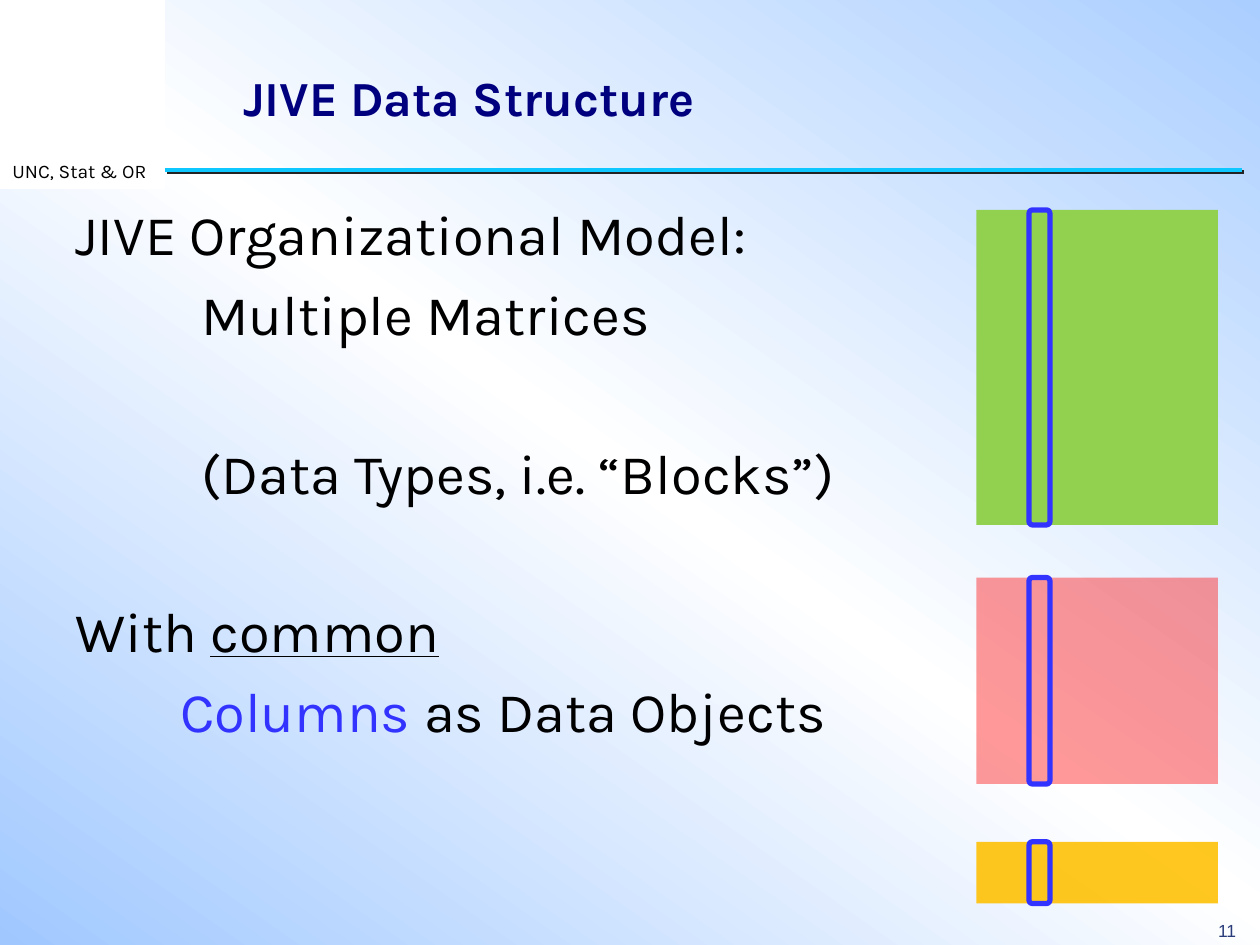
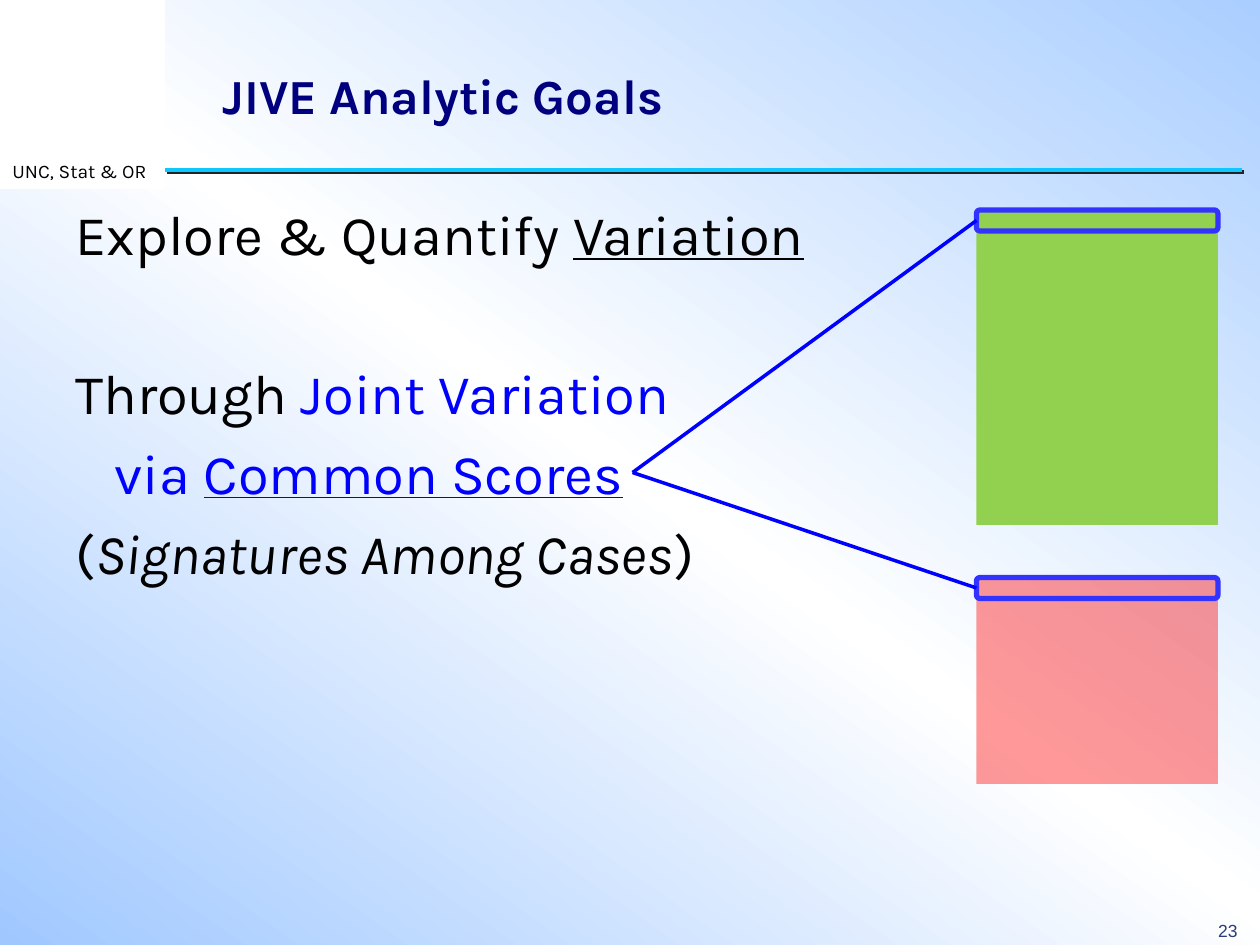
from lxml import etree
from pptx import Presentation
from pptx.dml.color import RGBColor
from pptx.enum.shapes import MSO_CONNECTOR, MSO_SHAPE
from pptx.enum.text import MSO_ANCHOR, PP_ALIGN
from pptx.oxml.ns import qn
from pptx.util import Pt

STRAIGHT = MSO_CONNECTOR.STRAIGHT
RECT, ROUNDED = MSO_SHAPE.RECTANGLE, MSO_SHAPE.ROUNDED_RECTANGLE
TOP, MIDDLE, BOTTOM = MSO_ANCHOR.TOP, MSO_ANCHOR.MIDDLE, MSO_ANCHOR.BOTTOM
LEFT = PP_ALIGN.LEFT

BLACK, WHITE, NAVY = "000000", "FFFFFF", "00007F"
BLUE, OUTLINE_BLUE = "0000FF", "3333FF"
RULE_BLUE, RULE_SHADOW, NUMBER_BLUE = "0FC7FF", "232323", "2A3D7A"
BACKDROP = [(0, "AACEFF"), (50, "FFFFFF"), (100, "A0C8FF")]

BLOCK_LEFT, BLOCK_WIDTH = 558, 138
GREEN_BLOCK = dict(top=120, height=180, color="92D050", alpha=100)
RED_BLOCK = dict(top=330, height=118, color="FF0000", alpha=40)
GOLD_BLOCK = dict(top=481, height=35.3, color="FFC000", alpha=88)
BAR = 12

LINE_GAP, SECTION_GAP = 7.4, 52.2
TAB = 72


def rgb(color):
    return RGBColor.from_string(color)


def points(*lengths):
    return [Pt(length) for length in lengths]


def child(parent, tag, **attributes):
    return etree.SubElement(parent, qn(tag), {k: str(v) for k, v in attributes.items()})


class Deck:
    def __init__(self):
        self.prs = Presentation()
        self.prs.slide_width, self.prs.slide_height = points(720, 540)
        self.slide = None
        self.paint_backdrop()

    def paint_backdrop(self):
        master = self.prs.slide_master
        fill = master.background.fill
        fill.gradient()
        fill.gradient_angle = 235
        stops = master.element.find(".//" + qn("a:gsLst"))
        for stop in list(stops):
            stops.remove(stop)
        for position, color in BACKDROP:
            stop = child(stops, "a:gs", pos=position * 1000)
            child(stop, "a:srgbClr", val=color)

    def start_slide(self, title, left, top, number):
        self.slide = self.prs.slides.add_slide(self.prs.slide_layouts[5])
        corner = self.shape(RECT, 0, 0, 94.3, 108, fill=WHITE)
        self.fill_text(corner.text_frame, [["UNC, Stat & OR"]], dict(size=11), anchor=BOTTOM)
        self.line(94.3, 97.2, 710, 97.2, RULE_BLUE, 2.25, shadow=RULE_SHADOW)
        self.text(689, 522, 26.6, 18, [[str(number)]],
                  dict(size=10, name="Arial", color=NUMBER_BLUE), wrap=False)
        heading = self.slide.shapes.title
        heading.left, heading.top, heading.width, heading.height = points(left, top, 563, 39)
        self.fill_text(heading.text_frame, [[title]],
                       dict(size=28, bold=True, color=NAVY), anchor=MIDDLE)

    def fill_text(self, frame, lines, style, anchor=TOP, wrap=True, inset=3.6):
        frame.word_wrap = wrap
        frame.vertical_anchor = anchor
        frame.margin_top = Pt(inset)
        for index, runs in enumerate(lines):
            paragraph = frame.add_paragraph() if index else frame.paragraphs[0]
            paragraph.alignment = LEFT
            for run in runs:
                words, changes = run if isinstance(run, tuple) else (run, {})
                piece = paragraph.add_run()
                piece.text = words
                values = {"name": "Karla", "color": BLACK, **style, **changes}
                piece.font.color.rgb = rgb(values.pop("color"))
                values["size"] = Pt(values["size"])
                for key, value in values.items():
                    setattr(piece.font, key, value)

    def text(self, left, top, width, height, lines, style, **options):
        box = self.slide.shapes.add_textbox(*points(left, top, width, height))
        self.fill_text(box.text_frame, lines, style, **options)
        return box

    def body(self, lines):
        box = self.text(36, 108, 651, 376, [runs for _, _, runs in lines],
                        dict(size=32), inset=6)
        for index, (gap, indent, _) in enumerate(lines):
            paragraph = box.text_frame.paragraphs[index]
            paragraph.space_before = Pt(gap)
            properties = paragraph._p.get_or_add_pPr()
            properties.set("marL", str(Pt(indent)))
            properties.set("indent", "0")

    def shape(self, preset, left, top, width, height, fill=None, alpha=100, outline=None):
        figure = self.slide.shapes.add_shape(preset, *points(left, top, width, height))
        figure.shadow.inherit = False
        if fill:
            figure.fill.solid()
            figure.fill.fore_color.rgb = rgb(fill)
            if alpha < 100:
                color = figure._element.spPr.find(".//" + qn("a:srgbClr"))
                child(color, "a:alpha", val=alpha * 1000)
        else:
            figure.fill.background()
        if outline:
            figure.line.color.rgb = rgb(outline)
            figure.line.width = Pt(3)
        else:
            figure.line.fill.background()
        return figure

    def block(self, top, height, color, alpha):
        self.shape(RECT, BLOCK_LEFT, top, BLOCK_WIDTH, height, color, alpha)

    def highlight(self, left, top, width, height):
        self.shape(ROUNDED, left, top, width, height, outline=OUTLINE_BLUE)

    def line(self, x1, y1, x2, y2, color, width, shadow=None):
        connector = self.slide.shapes.add_connector(STRAIGHT, *points(x1, y1, x2, y2))
        connector.line.color.rgb = rgb(color)
        connector.line.width = Pt(width)
        effects = child(connector._element.spPr, "a:effectLst")
        if shadow:
            cast = child(effects, "a:outerShdw", dist=Pt(1.4), dir=45 * 60000,
                         algn="ctr", rotWithShape=0)
            child(cast, "a:srgbClr", val=shadow)


def data_structure(deck):
    deck.start_slide("JIVE Data Structure", 131.8, 36, 11)
    deck.body([
        (0, 0, ["JIVE Organizational Model:"]),
        (LINE_GAP, TAB, ["Multiple Matrices"]),
        (SECTION_GAP, TAB, ["(Data Types, i.e. “Blocks”)"]),
        (SECTION_GAP, 0, ["With ", ("common", dict(underline=True))]),
        (LINE_GAP, 60, [("Columns", dict(color=OUTLINE_BLUE)), " as Data Objects"]),
    ])
    blocks = [GREEN_BLOCK, RED_BLOCK, GOLD_BLOCK]
    for block in blocks:
        deck.block(**block)
    for block in blocks:
        deck.highlight(588, block["top"], BAR, block["height"])


def analytic_goals(deck):
    deck.start_slide("JIVE Analytic Goals", 120, 34.6, 23)
    deck.body([
        (0, 0, ["Explore & Quantify ", ("Variation", dict(underline=True))]),
        (SECTION_GAP, 0, ["Through ", ("Joint Variation", dict(color=BLUE))]),
        (LINE_GAP, 22.5, [("via ", dict(color=BLUE)),
                          ("Common Scores", dict(color=BLUE, underline=True))]),
        (LINE_GAP, 0, ["(", ("Signatures Among Cases", dict(italic=True)), ")"]),
    ])
    blocks = [GREEN_BLOCK, RED_BLOCK]
    for block in blocks:
        deck.block(**block)
        deck.highlight(BLOCK_LEFT, block["top"], BLOCK_WIDTH, BAR)
    for block in blocks:
        deck.line(BLOCK_LEFT, block["top"] + BAR / 2, 361.5, 270, BLUE, 2)


def main():
    deck = Deck()
    data_structure(deck)
    analytic_goals(deck)
    deck.prs.save("out.pptx")


if __name__ == "__main__":
    main()
